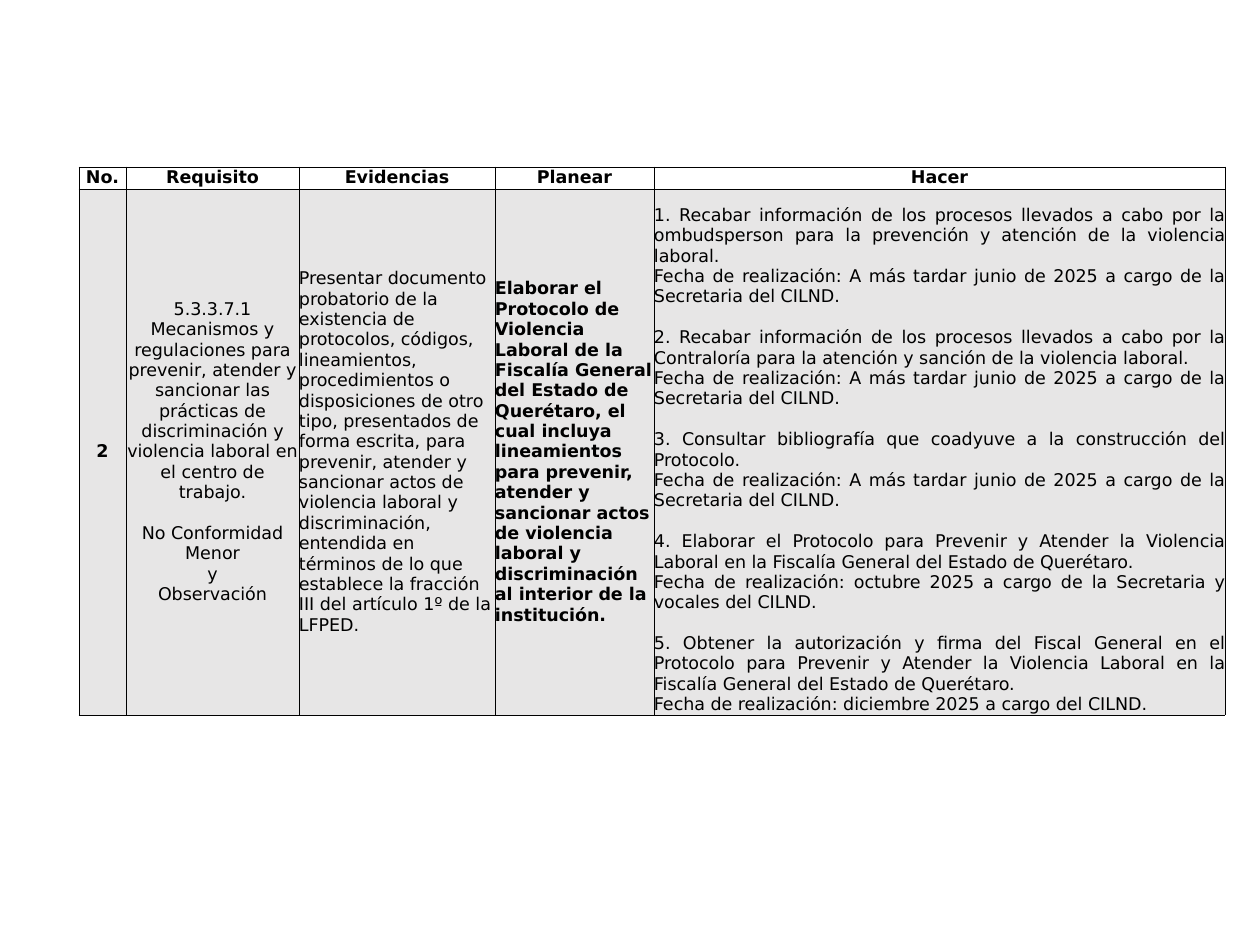
import pptx
import pptx.util
import pptx.dml.color
import pptx.enum.text
import pptx.oxml
import pptx.oxml.ns

ALIGN = pptx.enum.text.PP_ALIGN
ANCHOR = pptx.enum.text.MSO_ANCHOR
BLACK = pptx.dml.color.RGBColor(0x00, 0x00, 0x00)
WHITE = pptx.dml.color.RGBColor(0xFF, 0xFF, 0xFF)
GRAY = pptx.dml.color.RGBColor(0xE7, 0xE6, 0xE6)
FONT = "DejaVu Sans"
FONT_SIZE = 10
BLOCK_GAP = 11.64
BORDER_WIDTH = 0.5

SLIDE_WIDTH, SLIDE_HEIGHT = 1260, 945
TABLE_LEFT, TABLE_TOP = 79, 167
COLUMN_WIDTHS = [47, 173, 196, 159, 571]
ROW_HEIGHTS = [22, 526]

JUNE_DATE = "Fecha de realización: A más tardar junio de 2025 a cargo de la Secretaria del CILND."

HEADERS = ["No.", "Requisito", "Evidencias", "Planear", "Hacer"]

NUMBER = [["2"]]
REQUIREMENT = [
    ["5.3.3.7.1 Mecanismos y regulaciones para prevenir, atender y sancionar las prácticas de "
     "discriminación y violencia laboral en el centro de trabajo."],
    ["No Conformidad Menor", "y", "Observación"],
]
EVIDENCE = [[
    "Presentar documento probatorio de la existencia de protocolos, códigos, lineamientos, "
    "procedimientos o disposiciones de otro tipo, presentados de forma escrita, para prevenir, "
    "atender y sancionar actos de violencia laboral y discriminación, entendida en términos de lo "
    "que establece la fracción III del artículo 1º de la LFPED."
]]
PLAN = [[
    "Elaborar el Protocolo de Violencia Laboral de la Fiscalía General del Estado de Querétaro, "
    "el cual incluya lineamientos para prevenir, atender y sancionar actos de violencia laboral y "
    "discriminación al interior de la institución."
]]
ACTIONS = [
    ["1. Recabar información de los procesos llevados a cabo por la ombudsperson para la "
     "prevención y atención de la violencia laboral.", JUNE_DATE],
    ["2. Recabar información de los procesos llevados a cabo por la Contraloría para la atención "
     "y sanción de la violencia laboral.", JUNE_DATE],
    ["3. Consultar bibliografía que coadyuve a la construcción del Protocolo.", JUNE_DATE],
    ["4. Elaborar el Protocolo para Prevenir y Atender la Violencia Laboral en la Fiscalía General "
     "del Estado de Querétaro.",
     "Fecha de realización: octubre 2025 a cargo de la Secretaria y vocales del CILND."],
    ["5. Obtener la autorización y firma del Fiscal General en el Protocolo para Prevenir y Atender "
     "la Violencia Laboral en la Fiscalía General del Estado de Querétaro.",
     "Fecha de realización: diciembre 2025 a cargo del CILND."],
]

BODY = [
    (NUMBER, ALIGN.CENTER, True, ANCHOR.MIDDLE),
    (REQUIREMENT, ALIGN.CENTER, False, ANCHOR.MIDDLE),
    (EVIDENCE, ALIGN.LEFT, False, ANCHOR.MIDDLE),
    (PLAN, ALIGN.LEFT, True, ANCHOR.MIDDLE),
    (ACTIONS, ALIGN.JUSTIFY, False, ANCHOR.BOTTOM),
]


def px(length):
    return pptx.util.Emu(round(length * 914400 / 126))


def add_borders(cell):
    properties = cell._tc.get_or_add_tcPr()
    for position, side in enumerate(("lnL", "lnR", "lnT", "lnB")):
        border = pptx.oxml.parse_xml(
            f'<a:{side} {pptx.oxml.ns.nsdecls("a")} w="{pptx.util.Pt(BORDER_WIDTH)}">'
            f'<a:solidFill><a:srgbClr val="{BLACK}"/></a:solidFill></a:{side}>'
        )
        properties.insert(position, border)


def fill_cell(cell, blocks, alignment, bold, anchor, color):
    cell.margin_left = cell.margin_right = cell.margin_top = cell.margin_bottom = 0
    cell.vertical_anchor = anchor
    cell.fill.solid()
    cell.fill.fore_color.rgb = color
    add_borders(cell)
    cell.text = "\n".join(line for block in blocks for line in block)
    paragraphs = iter(cell.text_frame.paragraphs)
    for block_index, block in enumerate(blocks):
        for line_index in range(len(block)):
            paragraph = next(paragraphs)
            paragraph.alignment = alignment
            if block_index and line_index == 0:
                paragraph.space_before = pptx.util.Pt(BLOCK_GAP)
            paragraph.font.name = FONT
            paragraph.font.size = pptx.util.Pt(FONT_SIZE)
            paragraph.font.bold = bold
            paragraph.font.color.rgb = BLACK


def main():
    presentation = pptx.Presentation()
    presentation.slide_width = px(SLIDE_WIDTH)
    presentation.slide_height = px(SLIDE_HEIGHT)
    slide = presentation.slides.add_slide(presentation.slide_layouts[6])
    table = slide.shapes.add_table(
        len(ROW_HEIGHTS), len(COLUMN_WIDTHS), px(TABLE_LEFT), px(TABLE_TOP),
        px(sum(COLUMN_WIDTHS)), px(sum(ROW_HEIGHTS)),
    ).table
    table.first_row = False
    table.horz_banding = False
    for column, width in zip(table.columns, COLUMN_WIDTHS):
        column.width = px(width)
    for row, height in zip(table.rows, ROW_HEIGHTS):
        row.height = px(height)
    for index, (header, body) in enumerate(zip(HEADERS, BODY)):
        fill_cell(table.cell(0, index), [[header]], ALIGN.CENTER, True, ANCHOR.MIDDLE, WHITE)
        fill_cell(table.cell(1, index), *body, GRAY)
    presentation.save("out.pptx")


if __name__ == "__main__":
    main()
